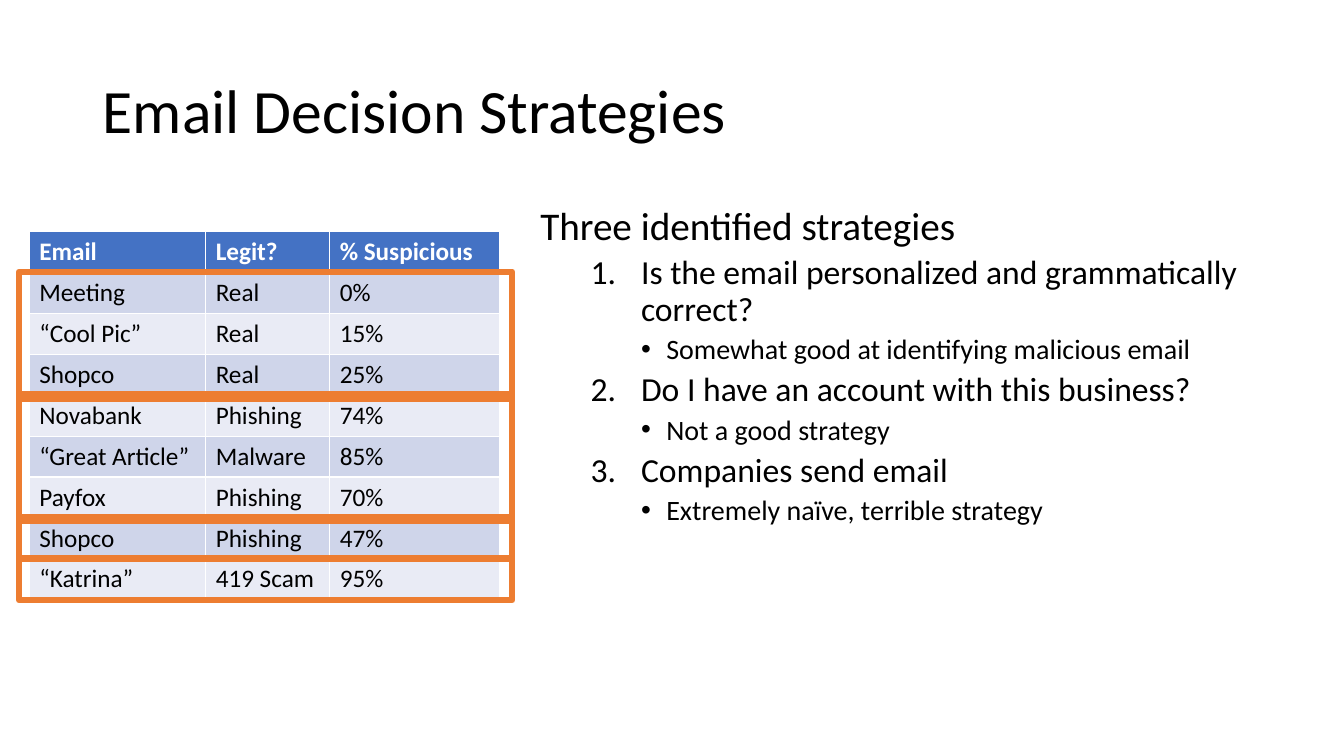
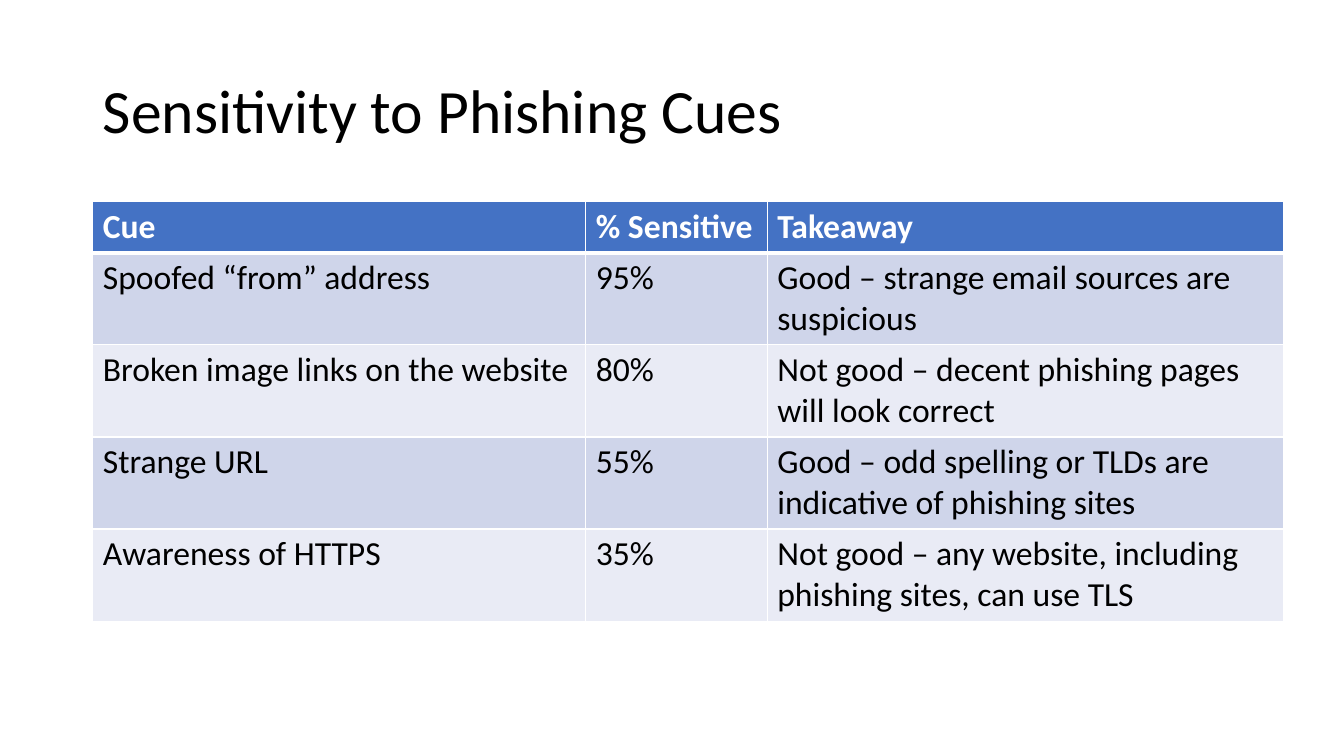
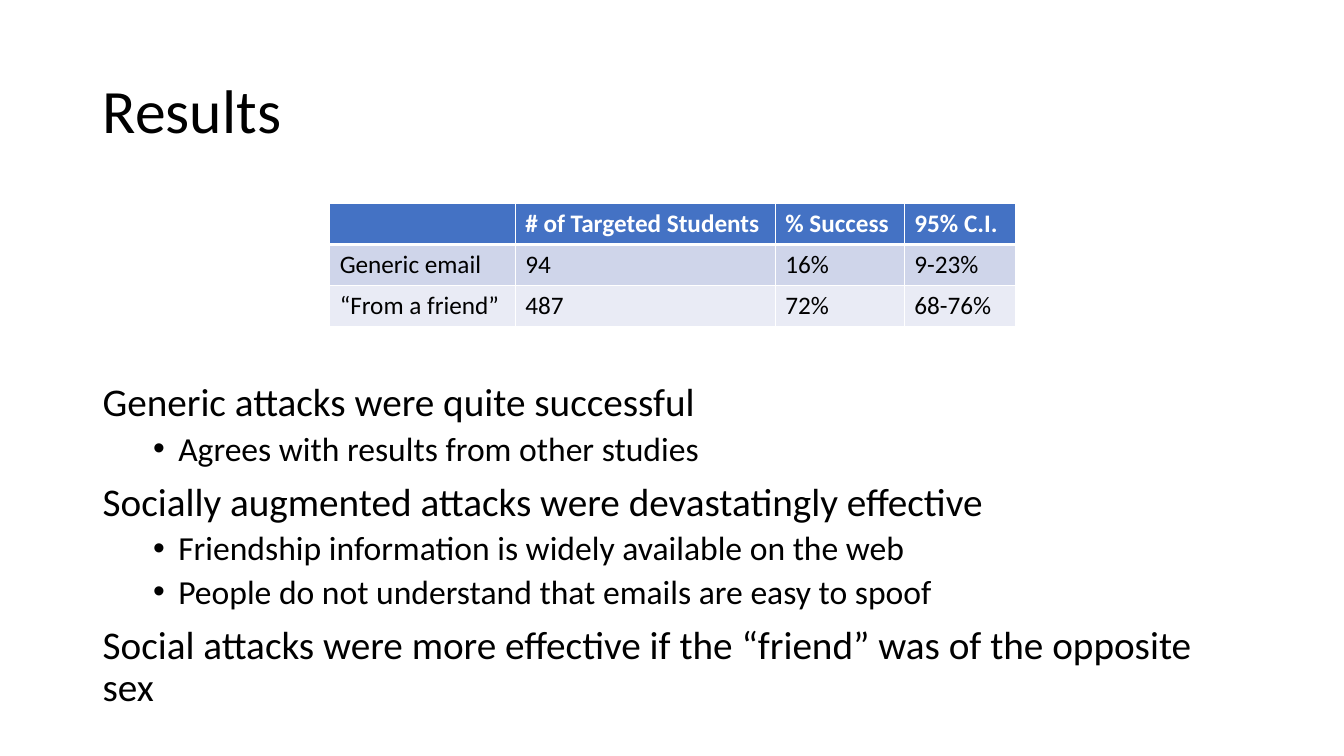
import pptx
import pptx.dml.color
import pptx.enum.shapes
import pptx.enum.text
import pptx.oxml
import pptx.oxml.ns
import pptx.util
from lxml import etree

Inches = pptx.util.Inches
Pt = pptx.util.Pt
qn = pptx.oxml.ns.qn
color = pptx.dml.color.RGBColor.from_string

# Shared look
FONT = "Calibri"
BLACK, WHITE, ORANGE = "000000", "FFFFFF", "ED7D31"
HEADER_FILL, BAND_FILLS = "4472C4", ("CFD5EA", "E9EBF5")
ROW_HEIGHT = 0.4056

# Outline styles: level, text size, space before, left indent, hanging indent, marker
OUTLINE = {
    "heading": dict(level=0, size=28, before=10, left=0, hang=0, marker=None),
    "numbered": dict(level=1, size=24, before=5, left=1, hang=0.5, marker="number"),
    "detail": dict(level=2, size=20, before=5, left=1.25, hang=0.25, marker="•"),
    "point": dict(level=1, size=24, before=5, left=0.75, hang=0.25, marker="•"),
}


def add_banded_table(slide, left, top, widths, heights, rows, size):
    table = slide.shapes.add_table(
        len(rows), len(widths), Inches(left), Inches(top),
        Inches(sum(widths)), Inches(sum(heights))).table
    table.horz_banding = False
    for column, width in zip(table.columns, widths):
        column.width = Inches(width)
    for r, (values, height) in enumerate(zip(rows, heights)):
        table.rows[r].height = Inches(height)
        for c, value in enumerate(values):
            cell = table.cell(r, c)
            # White grid, with a heavier rule under the header
            borders = {"a:lnL": 1, "a:lnR": 1,
                       "a:lnT": 3 if r == 1 else 1, "a:lnB": 3 if r == 0 else 1}
            for tag, points in borders.items():
                line = etree.SubElement(cell._tc.get_or_add_tcPr(), qn(tag), w=str(Pt(points)))
                fill = etree.SubElement(line, qn("a:solidFill"))
                etree.SubElement(fill, qn("a:srgbClr"), val=WHITE)
            cell.fill.solid()
            cell.fill.fore_color.rgb = color(BAND_FILLS[(r - 1) % 2] if r else HEADER_FILL)
            cell.text = value
            for run in cell.text_frame.paragraphs[0].runs:
                for name, setting in dict(name=FONT, size=Pt(size), bold=r == 0).items():
                    setattr(run.font, name, setting)
                run.font.color.rgb = color(BLACK if r else WHITE)


def add_outline(slide, left, top, width, height, items):
    frame = slide.shapes.add_textbox(
        Inches(left), Inches(top), Inches(width), Inches(height)).text_frame
    frame.word_wrap = True
    for i, (kind, text) in enumerate(items):
        style = OUTLINE[kind]
        paragraph = frame.add_paragraph() if i else frame.paragraphs[0]
        properties = paragraph._p.get_or_add_pPr()
        properties.set("marL", str(Inches(style["left"])))
        properties.set("indent", str(-Inches(style["hang"])))
        if style["marker"] == "number":
            etree.SubElement(properties, qn("a:buFont"), typeface="+mj-lt")
            etree.SubElement(properties, qn("a:buAutoNum"), type="arabicPeriod")
        elif style["marker"]:
            etree.SubElement(properties, qn("a:buFont"), typeface="Arial")
            etree.SubElement(properties, qn("a:buChar"), char=style["marker"])
        paragraph.level = style["level"]
        paragraph.line_spacing = 0.9
        paragraph.space_before = Pt(style["before"] if i else 0)
        run = paragraph.add_run()
        run.text = text
        run.font.name = FONT
        run.font.size = Pt(style["size"])
        run.font.color.rgb = color(BLACK)


presentation = pptx.Presentation()
presentation.slide_width = Inches(13.33)
presentation.slide_height = Inches(7.5)

# Slides and their titles
slides = []
for heading in ("Email Decision Strategies", "Sensitivity to Phishing Cues", "Results"):
    slide = presentation.slides.add_slide(presentation.slide_layouts[5])
    title = slide.shapes.title
    place = dict(left=0.92, top=0.4, width=11.5, height=1.45)
    for name, length in place.items():
        setattr(title, name, Inches(length))
    title.text_frame.text = heading
    title.text_frame.vertical_anchor = pptx.enum.text.MSO_ANCHOR.MIDDLE
    paragraph = title.text_frame.paragraphs[0]
    paragraph.alignment = pptx.enum.text.PP_ALIGN.LEFT
    paragraph.line_spacing = 0.9
    font = paragraph.runs[0].font
    font.name = FONT
    font.size = Pt(44)
    font.color.rgb = color(BLACK)
    slides.append(slide)
strategies, cues, results = slides

# Slide 1: how suspicious each email seemed
emails = [
    ("Email", "Legit?", "% Suspicious"),
    ("Meeting", "Real", "0%"),
    ("“Cool Pic”", "Real", "15%"),
    ("Shopco", "Real", "25%"),
    ("Novabank", "Phishing", "74%"),
    ("“Great Article”", "Malware", "85%"),
    ("Payfox", "Phishing", "70%"),
    ("Shopco", "Phishing", "47%"),
    ("“Katrina”", "419 Scam", "95%"),
]
emails_top = 2.3
add_banded_table(strategies, 0.29, emails_top, (1.75, 1.23, 1.69),
                 [ROW_HEIGHT] * len(emails), emails, 18)
add_outline(strategies, 5.26, 2, 7.15, 4.76, [
    ("heading", "Three identified strategies"),
    ("numbered", "Is the email personalized and grammatically correct?"),
    ("detail", "Somewhat good at identifying malicious email"),
    ("numbered", "Do I have an account with this business?"),
    ("detail", "Not a good strategy"),
    ("numbered", "Companies send email"),
    ("detail", "Extremely naïve, terrible strategy"),
])

# Frames around groups of emails: first row and number of rows
for first_row, row_count in ((1, 3), (4, 3), (7, 1), (8, 1)):
    group_frame = strategies.shapes.add_shape(
        pptx.enum.shapes.MSO_SHAPE.RECTANGLE, Inches(0.19),
        Inches(emails_top + first_row * ROW_HEIGHT - 0.01),
        Inches(4.89), Inches(row_count * 0.42))
    group_frame.shadow.inherit = False
    group_frame.fill.background()
    group_frame.line.color.rgb = color(ORANGE)
    group_frame.line.width = Pt(4.5)

# Slide 2: cues and takeaways
add_banded_table(cues, 0.92, 2, (4.89, 1.8, 5.12), [0.5] + [0.9] * 4, [
    ("Cue", "% Sensitive", "Takeaway"),
    ("Spoofed “from” address", "95%", "Good – strange email sources are suspicious"),
    ("Broken image links on the website", "80%",
     "Not good – decent phishing pages will look correct"),
    ("Strange URL", "55%", "Good – odd spelling or TLDs are indicative of phishing sites"),
    ("Awareness of HTTPS", "35%",
     "Not good – any website, including phishing sites, can use TLS"),
], 24)

# Slide 3: attack success and findings
add_banded_table(results, 3.27, 2.02, (1.84, 2.58, 1.28, 1.1), [ROW_HEIGHT] * 3, [
    ("", "# of Targeted Students", "% Success", "95% C.I."),
    ("Generic email", "94", "16%", "9-23%"),
    ("“From a friend”", "487", "72%", "68-76%"),
], 18)
add_outline(results, 0.92, 3.75, 11.06, 3.35, [
    ("heading", "Generic attacks were quite successful"),
    ("point", "Agrees with results from other studies"),
    ("heading", "Socially augmented attacks were devastatingly effective"),
    ("point", "Friendship information is widely available on the web"),
    ("point", "People do not understand that emails are easy to spoof"),
    ("heading", "Social attacks were more effective if the “friend” was of the opposite sex"),
])

presentation.save("out.pptx")
